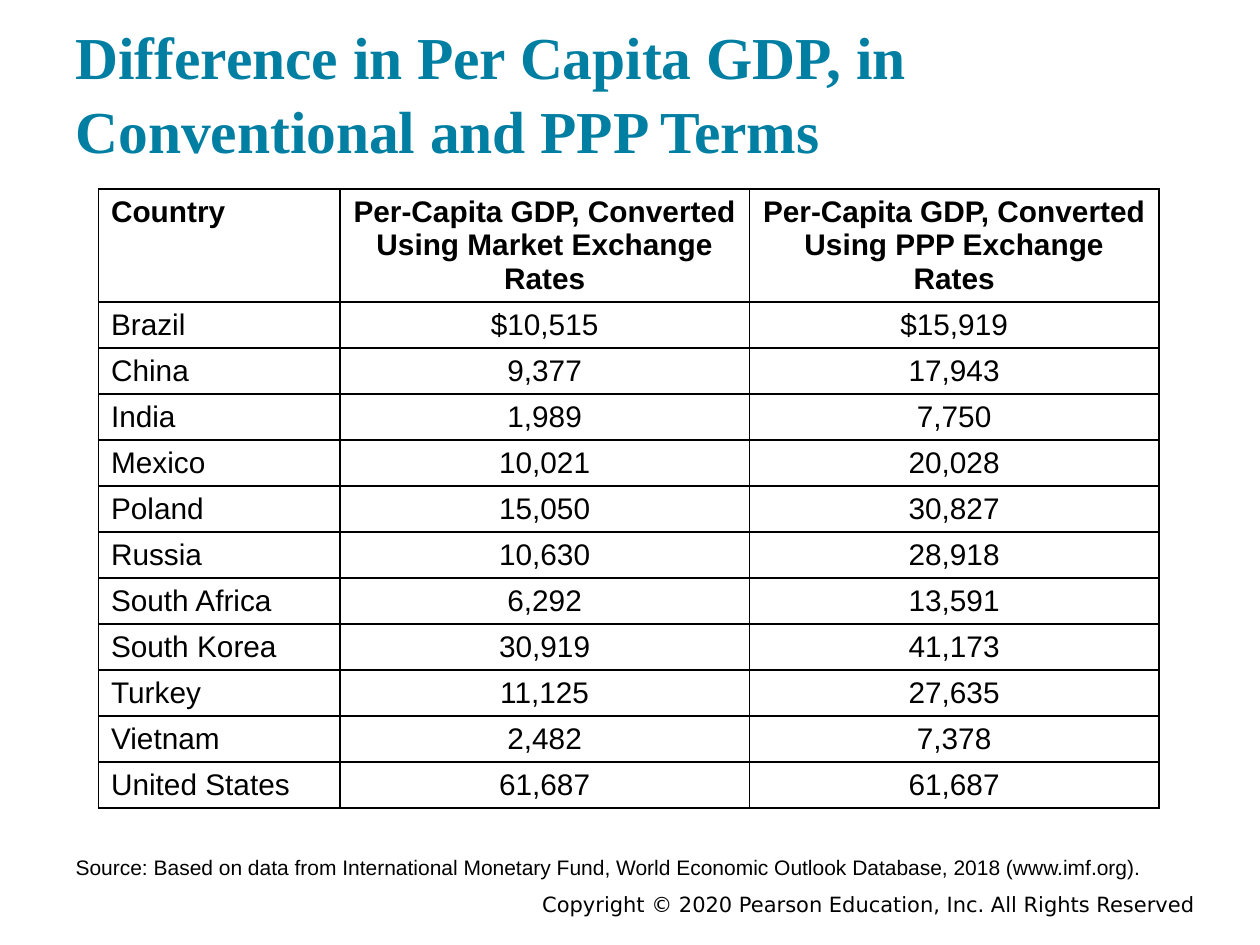
from dataclasses import dataclass

import pptx
import pptx.dml.color
import pptx.enum.text
import pptx.oxml
import pptx.oxml.ns
import pptx.util

Pt = pptx.util.Pt
ALIGN = pptx.enum.text.PP_ALIGN
ANCHOR = pptx.enum.text.MSO_ANCHOR
BLACK = pptx.dml.color.RGBColor(0x00, 0x00, 0x00)
TEAL = pptx.dml.color.RGBColor(0x00, 0x7F, 0xA3)

COLUMN_WIDTHS = (138, 234, 234)
HEADER_HEIGHT = 64
ROW_HEIGHT = 26.25


@dataclass(frozen=True)
class TextStyle:
    font: str
    size: float
    color: pptx.dml.color.RGBColor = BLACK
    bold: bool = False
    align: ALIGN = ALIGN.LEFT


@dataclass(frozen=True)
class Box:
    left: float
    top: float
    width: float
    height: float


@dataclass(frozen=True)
class GdpRow:
    country: str
    market: str
    ppp: str


HEADER = GdpRow(
    "Country",
    "Per-Capita GDP, Converted Using Market Exchange Rates",
    "Per-Capita GDP, Converted Using PPP Exchange Rates",
)
COUNTRIES = (
    GdpRow("Brazil", "$10,515", "$15,919"),
    GdpRow("China", "9,377", "17,943"),
    GdpRow("India", "1,989", "7,750"),
    GdpRow("Mexico", "10,021", "20,028"),
    GdpRow("Poland", "15,050", "30,827"),
    GdpRow("Russia", "10,630", "28,918"),
    GdpRow("South Africa", "6,292", "13,591"),
    GdpRow("South Korea", "30,919", "41,173"),
    GdpRow("Turkey", "11,125", "27,635"),
    GdpRow("Vietnam", "2,482", "7,378"),
    GdpRow("United States", "61,687", "61,687"),
)


def write(frame, text: str, style: TextStyle) -> None:
    paragraph = frame.paragraphs[0]
    paragraph.alignment = style.align
    run = paragraph.add_run()
    run.text = text
    run.font.name = style.font
    run.font.size = Pt(style.size)
    run.font.bold = style.bold
    run.font.color.rgb = style.color


def place(shape, box: Box, anchor: ANCHOR, inset: float) -> None:
    shape.left, shape.top = Pt(box.left), Pt(box.top)
    shape.width, shape.height = Pt(box.width), Pt(box.height)
    frame = shape.text_frame
    frame.word_wrap = True
    frame.auto_size = pptx.enum.text.MSO_AUTO_SIZE.NONE
    frame.vertical_anchor = anchor
    frame.margin_left = frame.margin_right = Pt(7.2)
    frame.margin_top = frame.margin_bottom = Pt(inset)


def remove_bullet(paragraph) -> None:
    properties = paragraph._p.get_or_add_pPr()
    properties.set("marL", "0")
    properties.set("indent", "0")
    properties.append(pptx.oxml.parse_xml(
        f"<a:buNone {pptx.oxml.ns.nsdecls('a')}/>"))


def add_borders(cell) -> None:
    properties = cell._tc.get_or_add_tcPr()
    for position, side in enumerate(("lnL", "lnR", "lnT", "lnB")):
        properties.insert(position, pptx.oxml.parse_xml(
            f'<a:{side} {pptx.oxml.ns.nsdecls("a")} w="{Pt(1)}">'
            f'<a:solidFill><a:srgbClr val="{BLACK}"/></a:solidFill></a:{side}>'))


def add_gdp_table(slide, left: float, top: float) -> None:
    rows = (HEADER, *COUNTRIES)
    height = HEADER_HEIGHT + ROW_HEIGHT * len(COUNTRIES)
    table = slide.shapes.add_table(
        len(rows), len(COLUMN_WIDTHS), Pt(left), Pt(top),
        Pt(sum(COLUMN_WIDTHS)), Pt(height)).table
    table.horz_banding = False
    for column, width in zip(table.columns, COLUMN_WIDTHS):
        column.width = Pt(width)
    for index, row in enumerate(rows):
        is_header = index == 0
        table.rows[index].height = Pt(HEADER_HEIGHT if is_header else ROW_HEIGHT)
        for column, value in enumerate((row.country, row.market, row.ppp)):
            cell = table.cell(index, column)
            cell.fill.background()
            add_borders(cell)
            align = ALIGN.CENTER if column else ALIGN.LEFT
            write(cell.text_frame, value,
                  TextStyle("Arial", 17, bold=is_header, align=align))


def main() -> None:
    presentation = pptx.Presentation()
    presentation.slide_width, presentation.slide_height = Pt(720), Pt(540)
    slide = presentation.slides.add_slide(presentation.slide_layouts[1])

    title = slide.shapes.title
    place(title, Box(36, 18, 648, 84), ANCHOR.BOTTOM, 7.2)
    title.text_frame.paragraphs[0].line_spacing = 1.04
    write(title.text_frame,
          "Difference in Per Capita GDP, in Conventional and PPP Terms",
          TextStyle("Times New Roman", 34, TEAL, bold=True))

    add_gdp_table(slide, 56.25, 108)

    source = slide.placeholders[1]
    place(source, Box(36, 472.5, 648, 37.5), ANCHOR.BOTTOM, 7.2)
    source_line = source.text_frame.paragraphs[0]
    source_line.space_before = Pt(0)
    remove_bullet(source_line)
    write(source.text_frame,
          "Source: Based on data from International Monetary Fund, "
          "World Economic Outlook Database, 2018 (www.imf.org).",
          TextStyle("Arial", 12))

    copyright_line = slide.shapes.add_textbox(0, 0, 0, 0)
    place(copyright_line, Box(126, 506, 564, 16), ANCHOR.TOP, 3.6)
    write(copyright_line.text_frame,
          "Copyright © 2020 Pearson Education, Inc. All Rights Reserved",
          TextStyle("DejaVu Sans", 12, align=ALIGN.RIGHT))

    presentation.save("out.pptx")


if __name__ == "__main__":
    main()
